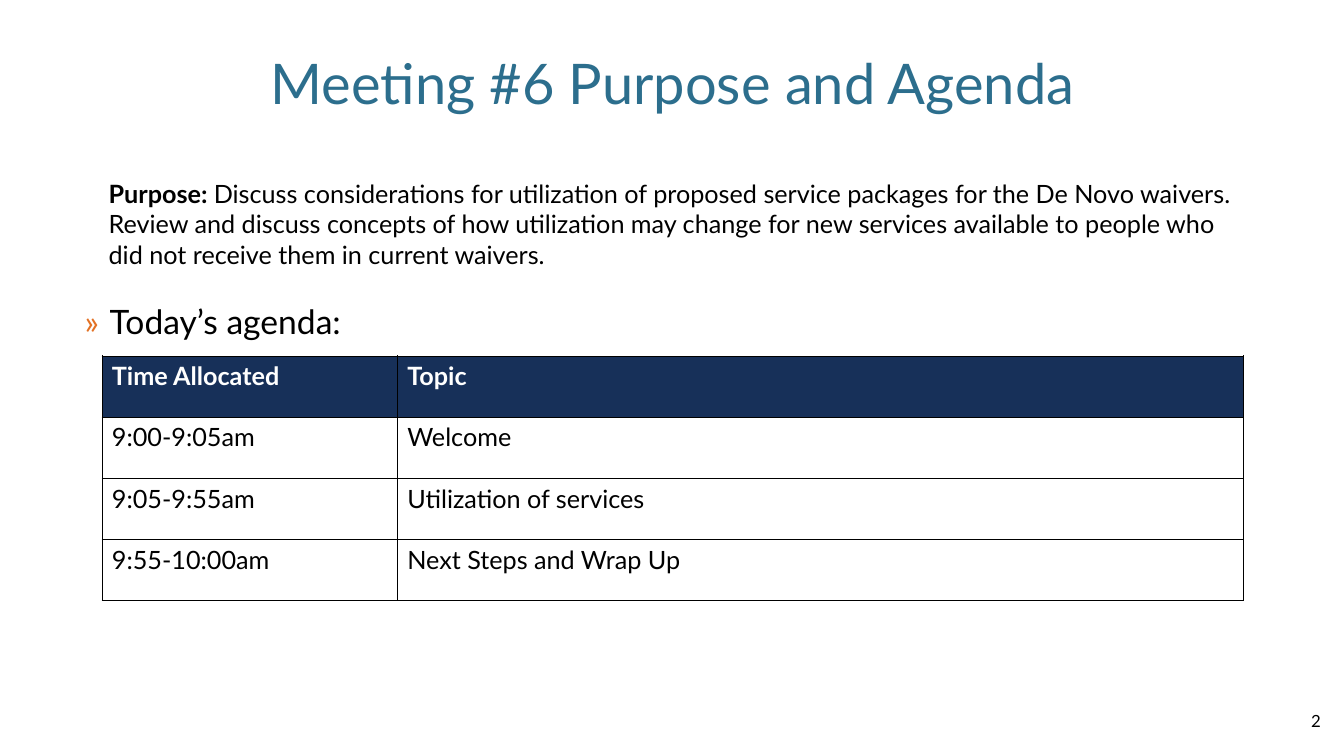
from dataclasses import dataclass

from lxml import etree
from pptx import Presentation
from pptx.dml.color import RGBColor
from pptx.enum import shapes, text
from pptx.oxml import ns
from pptx.util import Inches, Pt


@dataclass(frozen=True)
class Theme:
    font: str = "Lato"
    teal: str = "2C6E8D"
    navy: str = "173059"
    orange: str = "E37124"
    black: str = "000000"
    white: str = "FFFFFF"
    title: int = 40
    head: int = 24
    body: int = 18
    small: int = 12
    rule: float = 0.5


THEME = Theme()
LEFT, MID, RIGHT = text.PP_ALIGN.LEFT, text.PP_ALIGN.CENTER, text.PP_ALIGN.RIGHT
AGENDA = [
    ("Time Allocated", "Topic"),
    ("9:00-9:05am", "Welcome"),
    ("9:05-9:55am", "Utilization of services"),
    ("9:55-10:00am", "Next Steps and Wrap Up"),
]


def rgb(color):
    return RGBColor.from_string(color)


def write(par, words, size=THEME.body, color=THEME.black, bold=False, align=LEFT):
    """Add one formatted run to a paragraph."""
    par.alignment = align
    run = par.add_run()
    run.text = words
    font = run.font
    font.name, font.size, font.bold = THEME.font, Pt(size), bold
    font.color.rgb = rgb(color)


def add_text(slide, box, anchor=text.MSO_ANCHOR.TOP):
    frame = slide.shapes.add_textbox(*map(Inches, box)).text_frame
    frame.word_wrap = True
    frame.vertical_anchor = anchor
    return frame.paragraphs[0]


def add_bullet(par, mark, color, indent):
    props = par._p.get_or_add_pPr()
    props.set("marL", str(Inches(indent)))
    props.set("indent", str(-Inches(indent)))
    tint = etree.SubElement(props, ns.qn("a:buClr"))
    etree.SubElement(tint, ns.qn("a:srgbClr"), val=color)
    etree.SubElement(props, ns.qn("a:buFont"), typeface=THEME.font)
    etree.SubElement(props, ns.qn("a:buChar"), char=mark)


def add_border(cell, color, width):
    props = cell._tc.get_or_add_tcPr()
    for side in ("lnL", "lnR", "lnT", "lnB"):
        line = etree.SubElement(props, ns.qn(f"a:{side}"), w=str(Pt(width)))
        fill = etree.SubElement(line, ns.qn("a:solidFill"))
        etree.SubElement(fill, ns.qn("a:srgbClr"), val=color)


def add_title(slide, box, words):
    title = slide.shapes.title
    title.left, title.top, title.width, title.height = map(Inches, box)
    title.text_frame.vertical_anchor = text.MSO_ANCHOR.MIDDLE
    write(title.text_frame.paragraphs[0], words, size=THEME.title,
          color=THEME.teal, align=MID)


def add_purpose(slide, box, label, words):
    panel = slide.shapes.add_shape(
        shapes.MSO_SHAPE.ROUNDED_RECTANGLE, *map(Inches, box))
    panel.shadow.inherit = False
    panel.fill.solid()
    panel.fill.fore_color.rgb = rgb(THEME.white)
    panel.line.color.rgb = rgb(THEME.white)
    panel.line.width = Pt(THEME.rule)
    frame = panel.text_frame
    frame.word_wrap = True
    frame.vertical_anchor = text.MSO_ANCHOR.MIDDLE
    write(frame.paragraphs[0], label, bold=True)
    write(frame.paragraphs[0], words)


def add_heading(slide, box, words):
    par = add_text(slide, box)
    add_bullet(par, "»", THEME.orange, 0.25)
    write(par, words, size=THEME.head)


def add_agenda(slide, box, rows, first):
    """Draw the table; first is the width of the time column."""
    left, top, width, height = box
    table = slide.shapes.add_table(
        len(rows), len(rows[0]), *map(Inches, box)).table
    table.columns[0].width = Inches(first)
    table.columns[1].width = Inches(width - first)
    for r, row in enumerate(rows):
        table.rows[r].height = Inches(height / len(rows))
        head = r == 0
        for c, words in enumerate(row):
            cell = table.cell(r, c)
            add_border(cell, THEME.black, THEME.rule)
            cell.fill.solid()
            cell.fill.fore_color.rgb = rgb(THEME.navy if head else THEME.white)
            write(cell.text_frame.paragraphs[0], words, bold=head,
                  color=THEME.white if head else THEME.black)


def add_number(slide, box, words):
    par = add_text(slide, box, anchor=text.MSO_ANCHOR.MIDDLE)
    write(par, words, size=THEME.small, align=RIGHT)


def main():
    deck = Presentation()
    deck.slide_width, deck.slide_height = Inches(13.33), Inches(7.5)
    slide = deck.slides.add_slide(deck.slide_layouts.get_by_name("Title Only"))

    # Title and purpose
    add_title(slide, (0.92, 0.09, 11.5, 1.45), "Meeting #6 Purpose and Agenda")
    add_purpose(
        slide, (0.92, 1.61, 11.5, 1.22), "Purpose: ",
        "Discuss considerations for utilization of proposed service packages "
        "for the De Novo waivers. Review and discuss concepts of how "
        "utilization may change for new services available to people who did "
        "not receive them in current waivers.")

    # Agenda
    add_heading(slide, (0.74, 2.94, 11.5, 0.5), "Today’s agenda:")
    add_agenda(slide, (1.01, 3.53, 11.32, 2.43), AGENDA, first=2.93)

    # Slide number
    add_number(slide, (10.2, 6.95, 3, 0.4), "2")
    deck.save("out.pptx")


if __name__ == "__main__":
    main()
